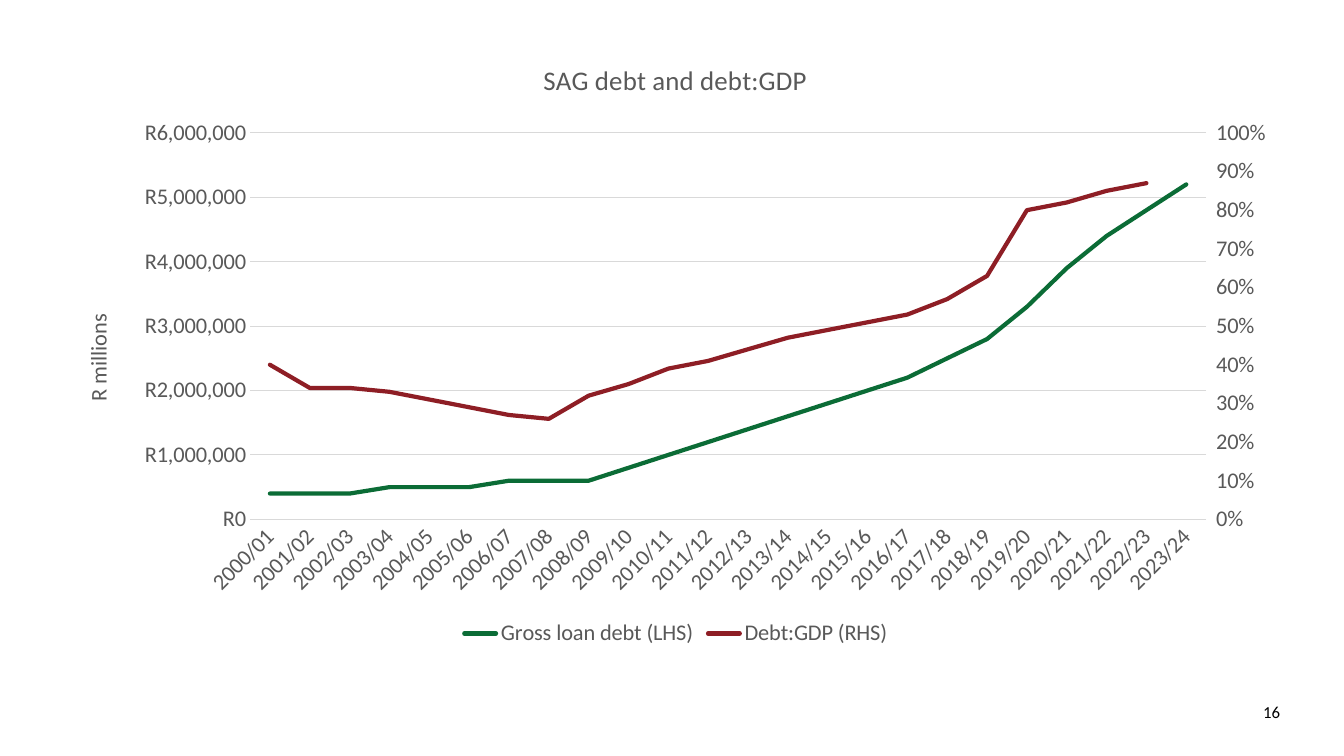
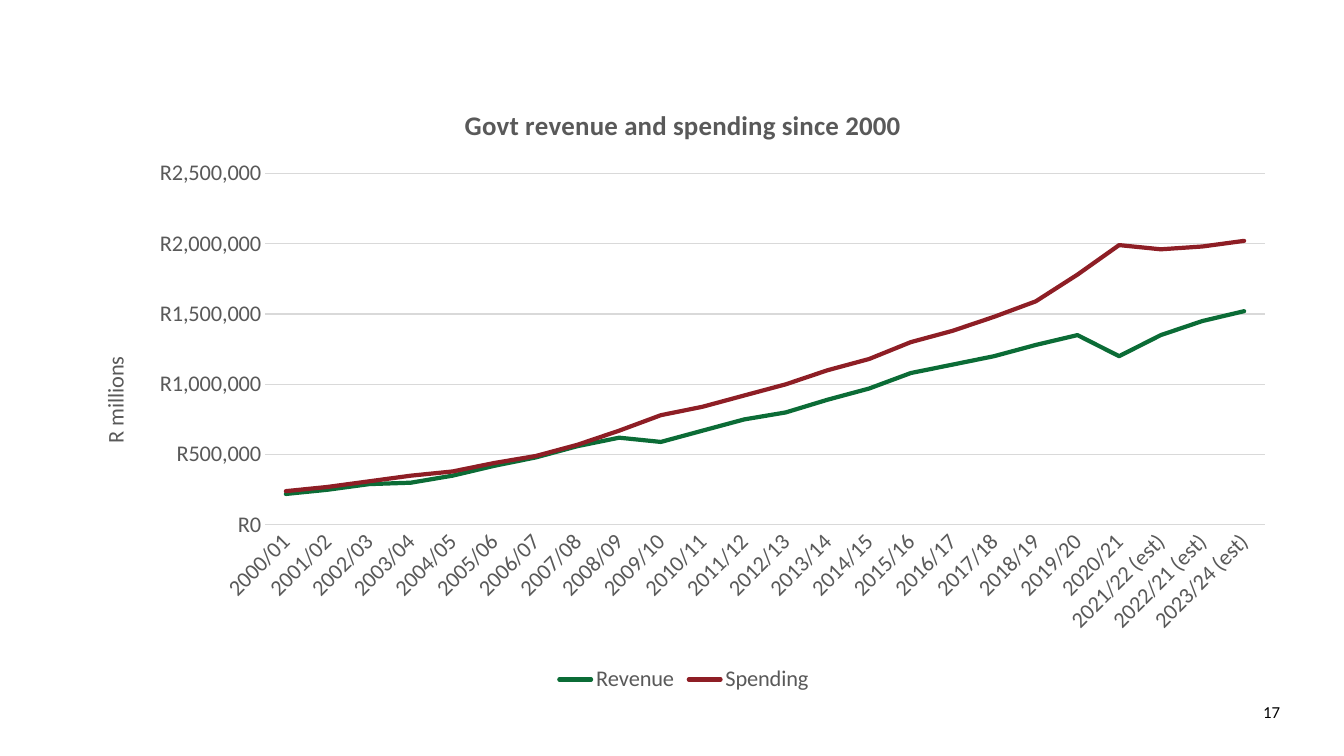
from copy import deepcopy

from lxml.etree import SubElement
from pptx import Presentation
from pptx.chart.axis import CategoryAxis, ValueAxis
from pptx.chart.data import CategoryChartData
from pptx.dml.color import RGBColor
from pptx.enum.chart import XL_CHART_TYPE, XL_LEGEND_POSITION, XL_TICK_MARK
from pptx.enum.text import PP_ALIGN
from pptx.oxml.ns import qn
from pptx.util import Cm, Pt

FONT = "Calibri"
BLACK = RGBColor(0x00, 0x00, 0x00)
GREY = RGBColor(0x59, 0x59, 0x59)
PALE = RGBColor(0xD9, 0xD9, 0xD9)
GREEN = RGBColor(0x0B, 0x6C, 0x36)
RED = RGBColor(0x8E, 0x1E, 0x25)

YEARS = [f"{year}/{(year + 1) % 100:02}" for year in range(2000, 2024)]
EST = YEARS[:21] + ["2021/22 (est)", "2022/21 (est)", "2023/24 (est)"]

DEBT = {
    "Gross loan debt (LHS)": [
        400000, 400000, 400000, 500000, 500000, 500000, 600000, 600000,
        600000, 800000, 1000000, 1200000, 1400000, 1600000, 1800000, 2000000,
        2200000, 2500000, 2800000, 3300000, 3900000, 4400000, 4800000, 5200000],
    "Debt:GDP (RHS)": [
        0.4, 0.34, 0.34, 0.33, 0.31, 0.29, 0.27, 0.26,
        0.32, 0.35, 0.39, 0.41, 0.44, 0.47, 0.49, 0.51,
        0.53, 0.57, 0.63, 0.8, 0.82, 0.85, 0.87, None],
}
BUDGET = {
    "Revenue": [
        220000, 250000, 290000, 300000, 350000, 420000, 480000, 560000,
        620000, 590000, 670000, 750000, 800000, 890000, 970000, 1080000,
        1140000, 1200000, 1280000, 1350000, 1200000, 1350000, 1450000, 1520000],
    "Spending": [
        240000, 270000, 310000, 350000, 380000, 440000, 490000, 570000,
        670000, 780000, 840000, 920000, 1000000, 1100000, 1180000, 1300000,
        1380000, 1480000, 1590000, 1780000, 1990000, 1960000, 1980000, 2020000],
}


def style(font, size=16, color=GREY, bold=False):
    """Set the look of a font."""
    font.name, font.size, font.bold = FONT, Pt(size), bold
    font.color.rgb = color


def place(node, index, box, spot):
    """Fix a chart part at a spot in centimetres inside the chart's box."""
    old = node.find(qn("c:layout"))
    if old is not None:
        node.remove(old)
    layout = node.makeelement(qn("c:layout"))
    node.insert(index, layout)
    manual = SubElement(layout, qn("c:manualLayout"))
    if len(spot) == 4:
        SubElement(manual, qn("c:layoutTarget")).set("val", "inner")
    for mode in ("xMode", "yMode"):
        SubElement(manual, qn(f"c:{mode}")).set("val", "edge")
    for key, part, whole in zip("xywh", spot, box[2:] * 2):
        SubElement(manual, qn(f"c:{key}")).set("val", str(part / whole))


def label(holder, text, size, bold, box, spot):
    """Write a chart or axis title at its spot."""
    frame = holder.text_frame
    frame.text = text
    style(frame.paragraphs[0].runs[0].font, size, GREY, bold)
    place(frame._txBody.getparent().getparent(), 1, box, spot)


def add_right(area):
    """Move the second series to a percent axis on the right."""
    left = area.find(qn("c:lineChart"))
    twin = deepcopy(left)
    left.remove(left.findall(qn("c:ser"))[1])
    twin.remove(twin.find(qn("c:ser")))
    left.addnext(twin)

    cat = deepcopy(area.find(qn("c:catAx")))
    val = deepcopy(area.find(qn("c:valAx")))
    area.find(qn("c:valAx")).addnext(val)
    val.addnext(cat)
    for node, own, other in ((cat, "5001", "5002"), (val, "5002", "5001")):
        node.find(qn("c:axId")).set("val", own)
        node.find(qn("c:crossAx")).set("val", other)
    for node, own in zip(twin.findall(qn("c:axId")), ("5001", "5002")):
        node.set("val", own)
    val.find(qn("c:axPos")).set("val", "r")
    val.find(qn("c:crosses")).set("val", "max")

    CategoryAxis(cat).visible = False
    axis = ValueAxis(val)
    axis.has_title = axis.has_major_gridlines = False
    axis.minimum_scale, axis.maximum_scale, axis.major_unit = 0, 1, 0.1
    axis.major_tick_mark = XL_TICK_MARK.OUTSIDE
    axis.tick_labels.number_format = "0%"


def add_lines(slide, box, title, years, table, top, step, plot, head, side,
              bold=False, right=False):
    """Draw a titled line chart in the given box."""
    data = CategoryChartData()
    data.categories = years
    for name, values in table.items():
        data.add_series(name, values)
    chart = slide.shapes.add_chart(
        XL_CHART_TYPE.LINE, *(Cm(part) for part in box), data).chart
    style(chart.font, color=BLACK)
    chart.has_title = True
    label(chart.chart_title, title, 19.2, bold, box, head)
    chart.has_legend = True
    chart.legend.position = XL_LEGEND_POSITION.BOTTOM
    chart.legend.include_in_layout = False
    style(chart.legend.font)

    area = chart._chartSpace.find(".//" + qn("c:plotArea"))
    chart.plots[0].vary_by_categories = False
    for series, color in zip(chart.plots[0].series, (GREEN, RED)):
        series.smooth = False
        series.format.line.width = Pt(3)
        series.format.line.color.rgb = color
    for line in area.iterfind(f"{qn('c:lineChart')}/{qn('c:ser')}//{qn('a:ln')}"):
        line.set("cap", "rnd")
        SubElement(line, qn("a:round"))

    cat, val = chart.category_axis, chart.value_axis
    for axis in (cat, val):
        axis.major_tick_mark = axis.minor_tick_mark = XL_TICK_MARK.NONE
        style(axis.tick_labels.font)
    val.has_major_gridlines = True
    for line in (cat.format.line, val.major_gridlines.format.line):
        line.width = Pt(0.75)
        line.color.rgb = PALE
    val.format.line.fill.background()
    val.minimum_scale, val.maximum_scale, val.major_unit = 0, top, step
    val.tick_labels.number_format = '"R"#,##0'
    val.tick_labels.number_format_is_linked = False
    label(val.axis_title, "R millions", 16, False, box, side)
    val.axis_title.text_frame._txBody.find(qn("a:bodyPr")).set("rot", "-5400000")

    turn = area.find(f"{qn('c:catAx')}/{qn('c:txPr')}/{qn('a:bodyPr')}")
    turn.set("rot", "-2700000")
    if right:
        add_right(area)
    place(area, 0, box, plot)


def add_page(deck, number):
    """Add a blank slide with its number at the lower right."""
    slide = deck.slides.add_slide(deck.slide_layouts[6])
    frame = slide.shapes.add_textbox(
        Cm(30.58), Cm(17.55), Cm(1.93), Cm(1)).text_frame
    frame.word_wrap = True
    frame.text = str(number)
    frame.paragraphs[0].alignment = PP_ALIGN.RIGHT
    style(frame.paragraphs[0].runs[0].font, 12, BLACK)
    return slide


def main():
    """Build and save the deck."""
    deck = Presentation()
    deck.slide_width, deck.slide_height = Cm(33.87), Cm(19.05)
    add_lines(add_page(deck, 16), (1.55, 1, 30.96, 15.42),
              "SAG debt and debt:GDP", YEARS, DEBT, 6000000, 1000000,
              plot=(4.75, 2.35, 24.1, 9.74), head=(12.02, 0.42),
              side=(0.44, 6.82), right=True)
    add_lines(add_page(deck, 17), (1.96, 2.18, 30.55, 15.4),
              "Govt revenue and spending since 2000", EST, BUDGET,
              2500000, 500000, plot=(4.72, 2.19, 25.2, 8.86),
              head=(9.63, 0.37), side=(0.46, 6.7), bold=True)
    deck.save("out.pptx")


if __name__ == "__main__":
    main()
